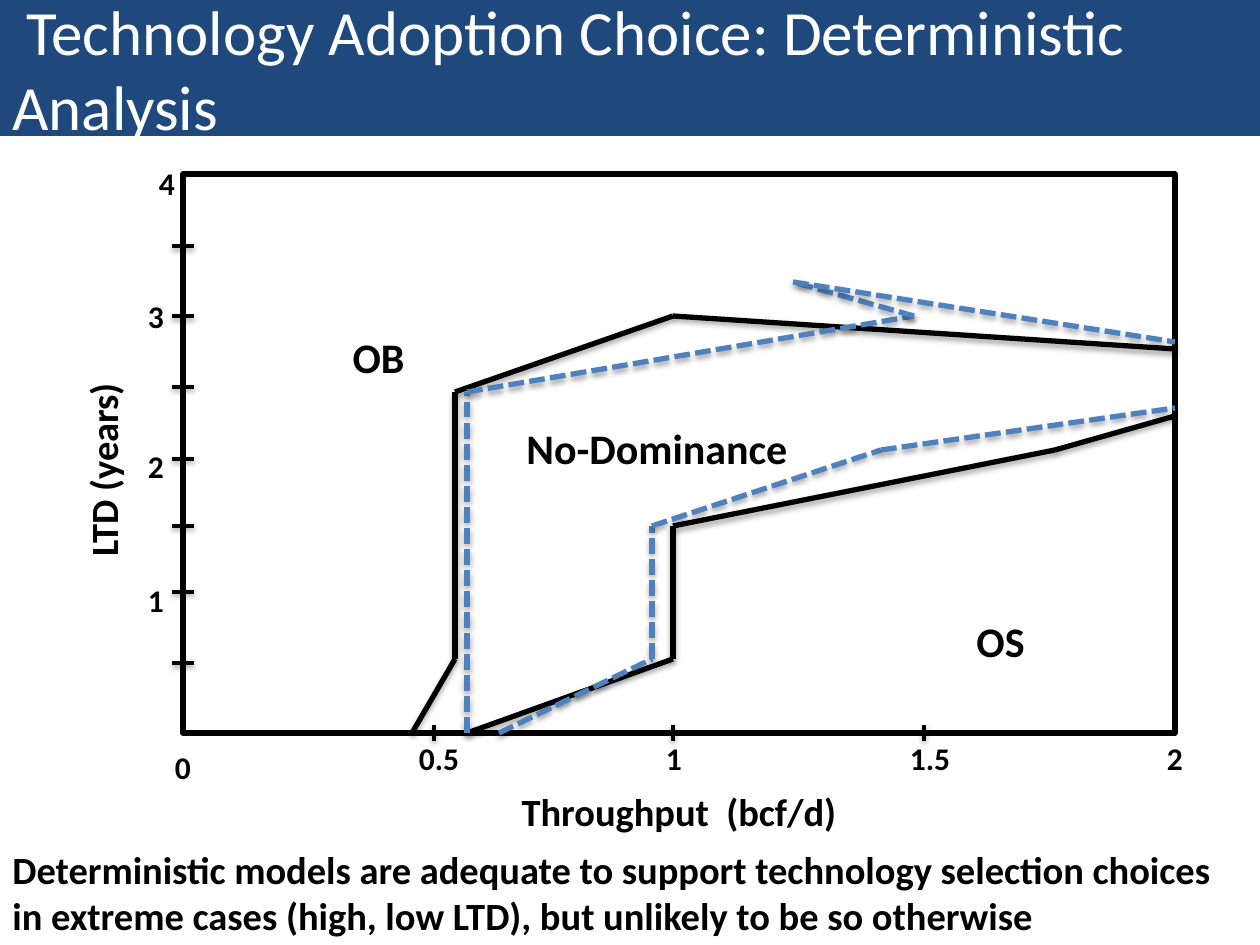
from dataclasses import dataclass
from itertools import pairwise

from lxml.etree import SubElement
from pptx import Presentation
from pptx.dml.color import RGBColor
from pptx.enum.dml import MSO_LINE
from pptx.enum.shapes import MSO_CONNECTOR, MSO_SHAPE
from pptx.enum.text import MSO_ANCHOR, MSO_AUTO_SIZE, PP_ALIGN
from pptx.oxml.ns import qn
from pptx.util import Pt

PX = 914400 / 126
SLIDE_W, SLIDE_H = 1260, 945


@dataclass(frozen=True)
class Theme:
    font: str = "Calibri"
    banner: str = "1F497D"
    paper: str = "FFFFFF"
    ink: str = "000000"
    alternative: str = "4F81BD"
    title_size: int = 36
    region_size: int = 24
    body_size: int = 22
    tick_size: int = 18
    border: int = 3
    tick: int = 2


THEME = Theme()


def px(*lengths):
    return [round(length * PX) for length in lengths]


def rgb(code):
    return RGBColor.from_string(code)


def write(frame, words, size, color, bold=True, align=PP_ALIGN.CENTER):
    frame.word_wrap = True
    paragraph = frame.paragraphs[0]
    paragraph.alignment = align
    run = paragraph.add_run()
    run.text = words
    run.font.name, run.font.size, run.font.bold = THEME.font, Pt(size), bold
    run.font.color.rgb = rgb(color)


def add_label(slide, words, box, size, align=PP_ALIGN.CENTER):
    label = slide.shapes.add_textbox(*px(*box))
    write(label.text_frame, words, size, THEME.ink, align=align)
    label.text_frame.auto_size = MSO_AUTO_SIZE.SHAPE_TO_FIT_TEXT
    return label


def add_panel(slide, box, fill):
    panel = slide.shapes.add_shape(MSO_SHAPE.RECTANGLE, *px(*box))
    panel.shadow.inherit = False
    panel.fill.solid()
    panel.fill.fore_color.rgb = rgb(fill)
    return panel


def add_shadow(line, distance, opacity):
    """Drop a soft shadow straight down; distance in EMU, opacity in percent."""
    effects = SubElement(line._element.spPr, qn("a:effectLst"))
    shadow = SubElement(effects, qn("a:outerShdw"), blurRad="40000",
                        dist=str(distance), dir="5400000", rotWithShape="0")
    color = SubElement(shadow, qn("a:srgbClr"), val=THEME.ink)
    SubElement(color, qn("a:alpha"), val=str(opacity * 1000))


def add_line(slide, start, end, color, width):
    line = slide.shapes.add_connector(MSO_CONNECTOR.STRAIGHT, *px(*start, *end))
    line.line.color.rgb = rgb(color)
    line.line.width = Pt(width)
    return line


def add_tick(slide, start, end):
    add_shadow(add_line(slide, start, end, THEME.ink, THEME.tick), 20000, 38)


def add_boundary(slide, box, points, color, dashed):
    left, top = box[:2]
    placed = [(left + x, top + y) for x, y in points]
    for start, end in pairwise(placed):
        segment = add_line(slide, start, end, color, THEME.border)
        if dashed:
            segment.line.dash_style = MSO_LINE.SQUARE_DOT
        add_shadow(segment, 23000, 35)


def add_title(slide, box):
    banner = add_panel(slide, box, THEME.banner)
    banner.line.fill.background()
    banner.text_frame.vertical_anchor = MSO_ANCHOR.MIDDLE
    write(banner.text_frame, " Technology Adoption Choice: Deterministic Analysis",
          THEME.title_size, THEME.paper, bold=False, align=PP_ALIGN.LEFT)


def add_axes(slide, box):
    left, top, width, height = box
    bottom = top + height
    frame = add_panel(slide, box, THEME.paper)
    frame.line.color.rgb = rgb(THEME.ink)
    frame.line.width = Pt(THEME.border)

    for x in (251, 490, 741):
        add_tick(slide, (left + x, bottom - 8), (left + x, bottom + 8))
    for y in (72, 142, 213, 285, 352, 418, 489):
        add_tick(slide, (left - 11, top + y), (left + 11, top + y))

    tick_labels = [
        ("0", 0, 568), ("0.5", 256, 559), ("1", 491, 559), ("1.5", 747, 559),
        ("2", width, 559), ("4", -16, -16), ("3", -27, 117), ("2", -27, 267),
        ("1", -27, 401),
    ]
    label_w, label_h = 98, 40
    for words, center, y in tick_labels:
        add_label(slide, words, (left + center - label_w // 2, top + y, label_w, label_h),
                  THEME.tick_size)

    add_label(slide, "Throughput  (bcf/d)", (left, bottom + 49, width, 47),
              THEME.body_size)
    vertical = add_label(slide, "LTD (years)", (left - 371, top + 265, 585, 62),
                         THEME.body_size)
    vertical.rotation = 270


def add_regions(slide, box):
    left, top = box[:2]
    for words, x, y, width in (("OB", 76, 151, 239), ("No-Dominance", 305, 242, 338),
                               ("OS", 698, 435, 239)):
        add_label(slide, words, (left + x, top + y, width, 50), THEME.region_size)

    base_case = (
        [(229, 559), (272, 485), (272, 218), (490, 142), (992, 175)],
        [(284, 559), (490, 485), (490, 352), (872, 276), (992, 242)],
    )
    alternative_case = (
        [(284, 559), (284, 218), (731, 142), (610, 108), (992, 168)],
        [(316, 559), (469, 485), (469, 352), (698, 276), (992, 234)],
    )
    for boundary in base_case:
        add_boundary(slide, box, boundary, THEME.ink, dashed=False)
    for boundary in alternative_case:
        add_boundary(slide, box, boundary, THEME.alternative, dashed=True)


def add_conclusion(slide, box):
    add_label(slide, "Deterministic models are adequate to support technology selection "
              "choices in extreme cases (high, low LTD), but unlikely to be so otherwise",
              box, THEME.body_size, PP_ALIGN.LEFT)


def main():
    deck = Presentation()
    deck.slide_width, deck.slide_height = px(SLIDE_W, SLIDE_H)
    slide = deck.slides.add_slide(deck.slide_layouts[6])
    plot = (183, 174, 992, 559)
    add_title(slide, (0, 0, SLIDE_W, 136))
    add_axes(slide, plot)
    add_regions(slide, plot)
    add_conclusion(slide, (0, 840, SLIDE_W, 105))
    deck.save("out.pptx")


if __name__ == "__main__":
    main()
